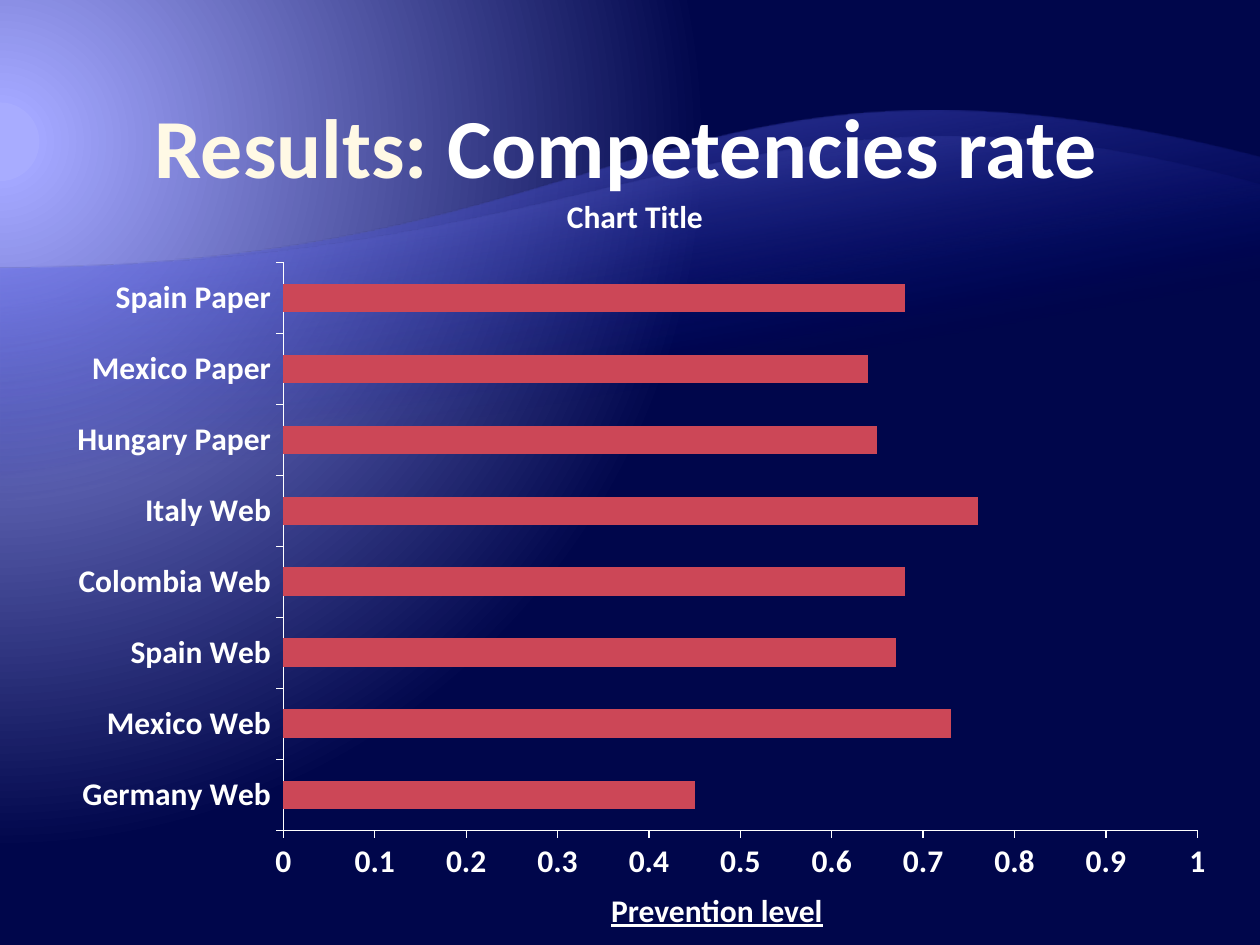
import pptx
import pptx.chart.data
import pptx.dml.color
import pptx.enum.chart
import pptx.enum.text
import pptx.oxml
import pptx.oxml.ns
import pptx.util
from pptx.util import Cm, Pt

FONT = "Calibri"
WHITE = "FFFFFF"
RATES = {
    "Germany Web": 0.45,
    "Mexico Web": 0.73,
    "Spain Web": 0.67,
    "Colombia Web": 0.68,
    "Italy Web": 0.76,
    "Hungary Paper": 0.65,
    "Mexico Paper": 0.64,
    "Spain Paper": 0.68,
}


def rgb(color):
    """Turn a hex string into a colour."""
    return pptx.dml.color.RGBColor.from_string(color)


def style(font, size, color=WHITE, bold=True, underline=None):
    """Set the typeface, size and colour of a font."""
    font.name, font.size, font.bold = FONT, Pt(size), bold
    font.underline = underline
    font.color.rgb = rgb(color)


def gradient(stops, shade):
    """Make a gradient fill from (percent, hex, opacity) stops."""
    marks = "".join(
        f'<a:gs pos="{pos * 1000}"><a:srgbClr val="{rgb(color)}">'
        f'<a:alpha val="{opacity * 1000}"/></a:srgbClr></a:gs>'
        for pos, color, opacity in stops
    )
    return pptx.oxml.parse_xml(
        f'<a:gradFill rotWithShape="1" {pptx.oxml.ns.nsdecls("a")}>'
        f"<a:gsLst>{marks}</a:gsLst>{shade}</a:gradFill>"
    )


def swap_fill(parent, fill):
    """Put a gradient in the place of the solid fill under parent."""
    solid = parent.find(pptx.oxml.ns.qn("a:solidFill"))
    parent.replace(solid, fill)


def add_background(s):
    """Fill the slide with a glow from its left edge."""
    s.background.fill.solid()
    shade = (
        '<a:path path="circle"><a:fillToRect l="20000" t="30000" '
        'r="135000" b="100000"/></a:path>'
    )
    stops = [(5, "A8ACFF", 100), (5, "A3A7FF", 100), (90, "00064B", 100)]
    bg = s.background._cSld.find(pptx.oxml.ns.qn("p:bg"))
    swap_fill(bg[0], gradient(stops, shade))


def add_wave(s, x, y, w, h, start, first, second, stops):
    """Draw a translucent panel whose top edge is one curve."""
    fb = s.shapes.build_freeform(Cm(x), Cm(y + start))
    corners = [(x + w, y), (x + w, y + h), (x, y + h)]
    fb.add_line_segments([(Cm(a), Cm(b)) for a, b in corners], close=True)
    sp = fb.convert_to_shape()
    sp.shadow.inherit = False
    sp.line.fill.background()
    sp.fill.solid()
    spPr = sp._element.spPr
    swap_fill(spPr, gradient(stops, '<a:lin ang="15600000" scaled="0"/>'))
    points = "".join(
        f'<a:pt x="{Cm(a)}" y="{Cm(b)}"/>' for a, b in (first, second, (w, 0))
    )
    curve = pptx.oxml.parse_xml(
        f'<a:cubicBezTo {pptx.oxml.ns.nsdecls("a")}>{points}</a:cubicBezTo>'
    )
    edge = next(spPr.iter(pptx.oxml.ns.qn("a:lnTo")))
    edge.getparent().replace(edge, curve)


def add_text(s, x, y, w, h, runs, size, wrap=True, underline=None):
    """Place one paragraph of (text, colour) runs."""
    tf = s.shapes.add_textbox(Cm(x), Cm(y), Cm(w), Cm(h)).text_frame
    tf.word_wrap = wrap
    p = tf.paragraphs[0]
    for text, color in runs:
        r = p.add_run()
        r.text = text
        style(r.font, size, color, underline=underline)
    return tf


def add_title(s, x, y, w, h):
    """Place the slide title at the bottom of its box."""
    runs = [("Results: ", "FFF9E5"), ("Competencies rate", WHITE)]
    tf = add_text(s, x, y, w, h, runs, 48)
    tf.vertical_anchor = pptx.enum.text.MSO_ANCHOR.BOTTOM
    tf.margin_left = tf.margin_right = 0
    tf.margin_top = tf.margin_bottom = Cm(0.03)
    tf.paragraphs[0].alignment = pptx.enum.text.PP_ALIGN.CENTER


def add_rates(s, x, y, w, h):
    """Chart the competencies rates as horizontal bars."""
    data = pptx.chart.data.CategoryChartData()
    data.categories = list(RATES)
    data.add_series("Series 1", list(RATES.values()))
    kind = pptx.enum.chart.XL_CHART_TYPE.BAR_CLUSTERED
    chart = s.shapes.add_chart(kind, Cm(x), Cm(y), Cm(w), Cm(h), data).chart
    style(chart.font, 10, bold=False)
    chart.has_legend = False
    chart.has_title = True
    r = chart.chart_title.text_frame.paragraphs[0].add_run()
    r.text = "Chart Title"
    style(r.font, 18)

    plot = chart.plots[0]
    plot.gap_width = 150
    plot.vary_by_categories = False
    fill = plot.series[0].format.fill
    fill.solid()
    fill.fore_color.rgb = rgb("CC4757")

    for axis in (chart.category_axis, chart.value_axis):
        axis.has_major_gridlines = False
        axis.major_tick_mark = pptx.enum.chart.XL_TICK_MARK.OUTSIDE
        axis.format.line.color.rgb = rgb(WHITE)
        axis.format.line.width = Pt(0.75)
        style(axis.tick_labels.font, 18)
    axis.minimum_scale, axis.maximum_scale, axis.major_unit = 0, 1, 0.1
    axis.tick_labels.number_format = "General"
    axis.tick_labels.number_format_is_linked = False

    place = {"x": 0.2, "y": 0.13, "w": 0.78, "h": 0.78}
    sizes = "".join(f'<c:{key} val="{val}"/>' for key, val in place.items())
    layout = pptx.oxml.parse_xml(
        f'<c:layout {pptx.oxml.ns.nsdecls("c")}><c:manualLayout>'
        '<c:layoutTarget val="inner"/><c:xMode val="edge"/>'
        f'<c:yMode val="edge"/>{sizes}</c:manualLayout></c:layout>'
    )
    area = chart._chartSpace.chart.plotArea
    for old in area.findall(pptx.oxml.ns.qn("c:layout")):
        area.remove(old)
    area.insert(0, layout)


def main():
    """Build and save the slide."""
    prs = pptx.Presentation()
    prs.slide_width, prs.slide_height = Cm(25.4), Cm(19.05)
    s = prs.slides.add_slide(prs.slide_layouts[6])
    add_background(s)
    add_wave(s, 0, 3.18, 25.4, 15.44, 2.23, (12.7, 2.23), (13.56, -3.05),
             [(65, "000D9E", 0), (100, "797FFF", 55)])
    add_wave(s, 0, 3.73, 25.4, 12.45, 1.68, (12.7, 1.68), (15.19, -2.94),
             [(65, "000D9E", 0), (100, "A3A7FF", 30)])
    add_title(s, 1.19, 1.63, 22.86, 2.34)
    add_rates(s, 0.99, 3.38, 23.62, 14.68)
    add_text(s, 12.07, 17.83, 4.98, 1.02, [("Prevention level", WHITE)], 18,
             wrap=False, underline=True)
    prs.save("out.pptx")


if __name__ == "__main__":
    main()
